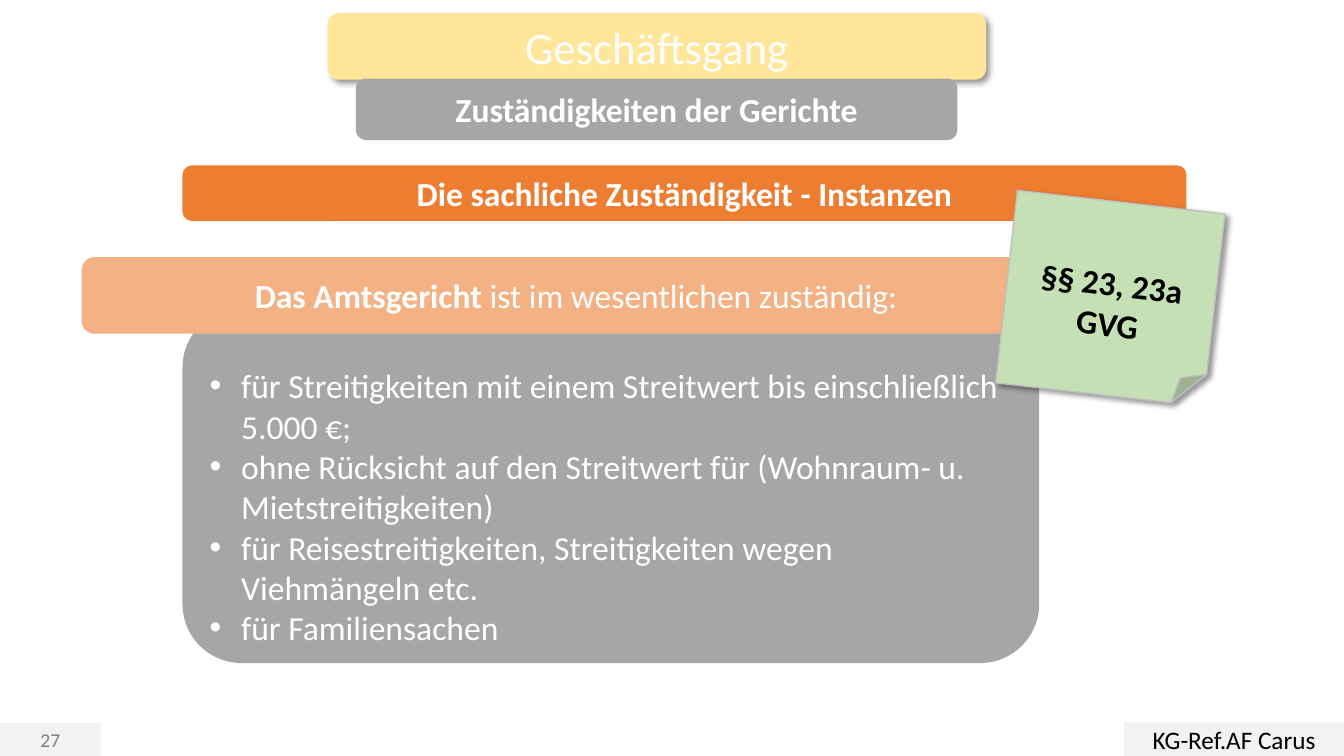
from lxml.etree import SubElement
from pptx import Presentation
from pptx.dml.color import RGBColor
from pptx.enum.shapes import MSO_SHAPE
from pptx.enum.text import MSO_ANCHOR, PP_ALIGN
from pptx.oxml import parse_xml
from pptx.oxml.ns import nsdecls, qn
from pptx.util import Cm, Pt

WHITE, GREY, PALE = "FFFFFF", "A6A6A6", "F2F2F2"
ROUND, RECT = MSO_SHAPE.ROUNDED_RECTANGLE, MSO_SHAPE.RECTANGLE
INDENT = Cm(0.79)
DUTIES = [
    "für Streitigkeiten mit einem Streitwert bis einschließlich 5.000 €;",
    "ohne Rücksicht auf den Streitwert für (Wohnraum- u. Mietstreitigkeiten)",
    "für Reisestreitigkeiten, Streitigkeiten wegen Viehmängeln etc.",
    "für Familiensachen",
]


def paint(target, color):
    """Fill a shape or line with a solid hex colour."""
    target.fill.solid()
    target.fill.fore_color.rgb = RGBColor.from_string(color)


def panel(slide, kind, box, color, edge=None):
    """Add a flat shape at a box given in centimetres."""
    shape = slide.shapes.add_shape(kind, *[Cm(n) for n in box])
    shape.shadow.inherit = False
    paint(shape, color)
    if edge:
        paint(shape.line, edge)
        shape.line.width = Pt(1)
    else:
        shape.line.fill.background()
    return shape


def shade(shape):
    """Give a shape a soft shadow to the lower right."""
    props = shape._element.spPr
    props.remove(props.find(qn("a:effectLst")))
    props.append(parse_xml(
        f'<a:effectLst {nsdecls("a")}>'
        '<a:outerShdw blurRad="50800" dist="38100" dir="2700000" algn="tl" rotWithShape="0">'
        '<a:srgbClr val="000000"><a:alpha val="40000"/></a:srgbClr>'
        '</a:outerShdw></a:effectLst>'))


def write(shape, lines, size=24, color=WHITE, bold=False, align=PP_ALIGN.CENTER):
    """Set the lines of a shape and format their runs."""
    frame = shape.text_frame
    frame.text = "\n".join(lines)
    frame.word_wrap = True
    frame.vertical_anchor = MSO_ANCHOR.MIDDLE
    for para in frame.paragraphs:
        para.alignment = align
        for run in para.runs:
            style(run, size, color, bold)
    return frame


def style(run, size, color, bold):
    """Format one run."""
    run.font.name = "Calibri"
    run.font.size = Pt(size)
    run.font.bold = bold
    run.font.color.rgb = RGBColor.from_string(color)


def bullet(para):
    """Give a paragraph a round bullet with a hanging indent."""
    props = para._p.get_or_add_pPr()
    props.set("marL", str(INDENT))
    props.set("indent", str(-INDENT))
    SubElement(props, qn("a:buFont"), typeface="Arial")
    SubElement(props, qn("a:buChar"), char="•")


def lower(frame):
    """Push centred text half a line down."""
    frame.margin_top, frame.margin_bottom = Cm(1.04), 0


def head(slide, left, top, width):
    """Draw the title, the subtitle and the topic bar."""
    title = panel(slide, ROUND, (left + 3.66, top, 16.59, 1.68), "FFE699")
    shade(title)
    write(title, ["Geschäftsgang"], 32)
    sub = panel(slide, ROUND, (left + 4.37, top + 1.65, 15.16, 1.55), GREY)
    write(sub, ["Zuständigkeiten der Gerichte"], bold=True)
    topic = panel(slide, ROUND, (left, top + 3.84, width, 1.4), "ED7D31")
    write(topic, ["Die sachliche Zuständigkeit - Instanzen"], bold=True)


def court(slide, left, top, width):
    """Draw the list of duties under its heading bar."""
    duties = panel(slide, ROUND, (left + 2.54, top + 1.29, 21.59, 8.94), GREY)
    frame = write(duties, DUTIES, align=PP_ALIGN.LEFT)
    lower(frame)
    for para in frame.paragraphs:
        bullet(para)
    bar = panel(slide, ROUND, (left, top, width, 1.93), "F4B183")
    para = write(bar, ["Das Amtsgericht "], bold=True).paragraphs[0]
    rest = para.add_run()
    rest.text = "ist im wesentlichen zuständig:"
    style(rest, 24, WHITE, False)


def note(slide, box):
    """Draw the tilted sticky note with the statute."""
    sheet = panel(slide, MSO_SHAPE.FOLDED_CORNER, box, "C5E0B4", "BFBFBF")
    sheet.rotation = 6.5
    shade(sheet)
    lower(write(sheet, ["§§ 23, 23a GVG"], color="000000", bold=True))


def foot(slide, width, base):
    """Draw the page number and the course label along the base."""
    page = panel(slide, RECT, (0, base - 0.81, 2.54, 0.81), PALE, PALE)
    write(page, ["27"], 14, "808080")
    label = panel(slide, RECT, (width - 5.54, base - 0.84, 5.54, 0.84), PALE)
    write(label, ["KG-Ref.AF Carus"], 18, "000000")


def main():
    """Build the slide and save it."""
    deck = Presentation()
    deck.slide_width, deck.slide_height = Cm(33.87), Cm(19.05)
    slide = deck.slides.add_slide(deck.slide_layouts[6])
    foot(slide, 33.87, 19.05)
    head(slide, 4.6, 0.33, 25.3)
    court(slide, 2.06, 6.48, 24.92)
    note(slide, (25.35, 5.08, 5.26, 4.88))
    deck.save("out.pptx")


if __name__ == "__main__":
    main()
